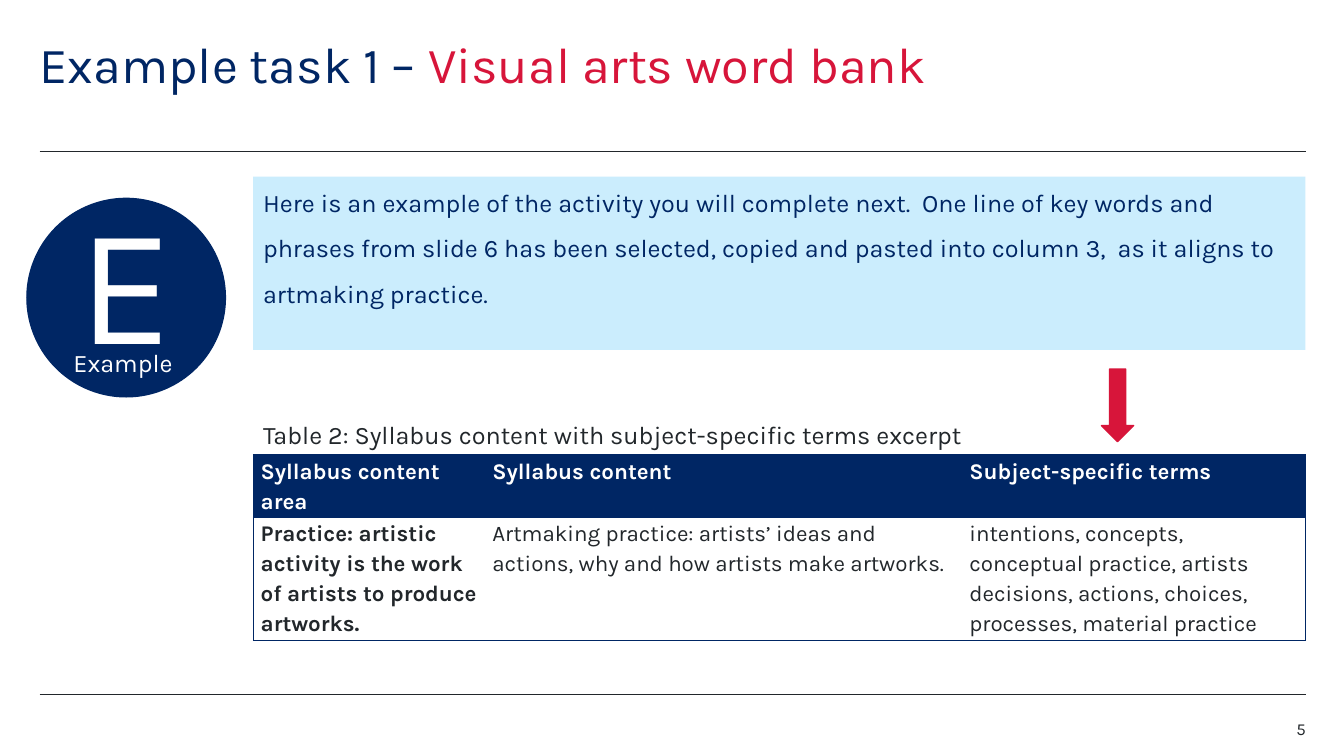
from lxml import etree
from pptx import Presentation
from pptx.dml.color import RGBColor
from pptx.enum.shapes import MSO_CONNECTOR, MSO_SHAPE
from pptx.enum.text import MSO_ANCHOR, MSO_AUTO_SIZE, PP_ALIGN
from pptx.oxml.ns import qn
from pptx.util import Cm, Pt

LEFT, CENTER, RIGHT = PP_ALIGN.LEFT, PP_ALIGN.CENTER, PP_ALIGN.RIGHT
TOP, MIDDLE = MSO_ANCHOR.TOP, MSO_ANCHOR.MIDDLE
OVAL, RECTANGLE, DOWN_ARROW = MSO_SHAPE.OVAL, MSO_SHAPE.RECTANGLE, MSO_SHAPE.DOWN_ARROW
STRAIGHT = MSO_CONNECTOR.STRAIGHT
NO_AUTOFIT = MSO_AUTO_SIZE.NONE
FONT = "Karla"
COLORS = {"navy": "002664", "red": "D7153A", "sky": "CBEDFD", "ink": "22272B", "white": "FFFFFF"}
NO_STYLE = "{2D5ABB26-0587-4C30-8999-92F81FD0307C}"
PLAIN, PADDED = (0, 0, 0, 0), (0.25, 0.13, 0.25, 0.13)
COLUMN_WIDTHS = (5.84, 12.02, 8.66)
ROW_HEIGHTS = (1.57, 3.1)
ROWS = (
    ("Syllabus content area", "Syllabus content", "Subject-specific terms"),
    (
        "Practice: artistic activity is the work of artists to produce artworks.",
        "Artmaking practice: artists’ ideas and actions, why and how artists make artworks.",
        "intentions, concepts, conceptual practice, artists decisions, actions, choices, "
        "processes, material practice",
    ),
)


def color(name):
    """Return the named colour."""
    return RGBColor.from_string(COLORS[name])


def style(paragraph, size, color_name, align=LEFT, spacing=1.0, bold=False):
    """Format a whole paragraph."""
    paragraph.alignment = align
    paragraph.line_spacing = spacing
    font = paragraph.font
    font.name, font.size, font.bold = FONT, Pt(size), bold
    font.color.rgb = color(color_name)


def frame_text(frame, insets, anchor):
    """Set the insets (left, top, right, bottom) and anchor of a text frame."""
    frame.auto_size = NO_AUTOFIT
    frame.word_wrap = True
    frame.vertical_anchor = anchor
    frame.margin_left, frame.margin_top, frame.margin_right, frame.margin_bottom = map(Cm, insets)


def write(shape, text, size, color_name, insets=PADDED, anchor=TOP, align=LEFT, spacing=1.0):
    """Put one formatted paragraph in a shape."""
    frame = shape.text_frame
    frame_text(frame, insets, anchor)
    paragraph = frame.paragraphs[0]
    paragraph.text = text
    style(paragraph, size, color_name, align, spacing)


def add_block(slide, kind, box, fill, outlined=False):
    """Add a flat filled shape, with an optional outline of the same colour."""
    shape = slide.shapes.add_shape(kind, *map(Cm, box))
    shape.shadow.inherit = False
    shape.fill.solid()
    shape.fill.fore_color.rgb = color(fill)
    if outlined:
        shape.line.color.rgb = color(fill)
        shape.line.width = Pt(1)
    else:
        shape.line.fill.background()
    return shape


def add_text(slide, box, *args, **options):
    """Add a text box with one formatted paragraph."""
    write(slide.shapes.add_textbox(*map(Cm, box)), *args, **options)


def add_rule(slide, left, top, width):
    """Draw a thin horizontal rule."""
    rule = slide.shapes.add_connector(STRAIGHT, Cm(left), Cm(top), Cm(left + width), Cm(top))
    rule.line.color.rgb = color("ink")
    rule.line.width = Pt(0.5)
    etree.SubElement(rule._element.spPr, qn("a:effectLst"))


def add_title(slide, box):
    """Fill the title placeholder in two colours."""
    title = slide.shapes.title
    title.left, title.top, title.width, title.height = map(Cm, box)
    frame_text(title.text_frame, PLAIN, TOP)
    paragraph = title.text_frame.paragraphs[0]
    style(paragraph, 36, "navy", spacing=0.9)
    for text, name in (("Example task 1 – ", "navy"), ("Visual arts word bank", "red")):
        run = paragraph.add_run()
        run.text = text
        run.font.color.rgb = color(name)


def add_badge(slide, left, top, diameter):
    """Add the round example badge."""
    circle = add_block(slide, OVAL, (left, top, diameter, diameter), "navy", outlined=True)
    write(circle, "E", 120, "white", (0.25, 0, 0.25, 1.04), MIDDLE, CENTER)
    add_text(slide, (left + 1.17, top + 3.74, 2.64, 1.22), "Example", 18, "white", PLAIN)


def add_introduction(slide, box):
    """Add the shaded panel that explains the activity."""
    panel = add_block(slide, RECTANGLE, box, "sky")
    text = (
        "Here is an example of the activity you will complete next.  One line of key words and "
        "phrases from slide 6 has been selected, copied and pasted into column 3,  as it aligns "
        "to artmaking practice."
    )
    write(panel, text, 18, "navy", (0.25, 0, 0.25, 1.16), MIDDLE, spacing=1.5)


def add_border(cell, side):
    """Draw a thin navy border on one side of a cell."""
    line = etree.SubElement(cell._tc.get_or_add_tcPr(), qn(f"a:ln{side}"), w=str(Pt(0.5)))
    fill = etree.SubElement(line, qn("a:solidFill"))
    etree.SubElement(fill, qn("a:srgbClr"), val=COLORS["navy"])


def fill_cell(cell, text, is_header, is_first, is_last):
    """Write and format one cell of the syllabus table."""
    sides = ("L" if is_first else "") + ("R" if is_last else "") + ("T" if is_header else "TB")
    for side in sides:
        add_border(cell, side)
    if is_header:
        cell.fill.solid()
        cell.fill.fore_color.rgb = color("navy")
    else:
        cell.fill.background()
    cell.margin_left = cell.margin_right = Cm(0.19)
    cell.margin_top = cell.margin_bottom = 0
    paragraph = cell.text_frame.paragraphs[0]
    paragraph.text = text
    style(paragraph, 16, "white" if is_header else "ink", spacing=1.15, bold=is_header or is_first)


def add_syllabus(slide, left, top):
    """Add the caption, the arrow to the third column and the syllabus table."""
    caption = "Table 2: Syllabus content with subject-specific terms excerpt"
    add_text(slide, (left, top, 19.35, 1.02), caption, 18, "ink", anchor=MIDDLE)
    add_block(slide, DOWN_ARROW, (left + 21.38, top - 1.14, 0.81, 1.83), "red", outlined=True)
    size = Cm(sum(COLUMN_WIDTHS)), Cm(sum(ROW_HEIGHTS))
    table = slide.shapes.add_table(
        len(ROWS), len(COLUMN_WIDTHS), Cm(left), Cm(top + 1.02), *size
    ).table
    table.horz_banding = False
    table._tbl.tblPr.find(qn("a:tableStyleId")).text = NO_STYLE
    for column, width in zip(table.columns, COLUMN_WIDTHS):
        column.width = Cm(width)
    for row, height, texts in zip(table.rows, ROW_HEIGHTS, ROWS):
        row.height = Cm(height)
        for index, (cell, text) in enumerate(zip(row.cells, texts)):
            fill_cell(cell, text, texts is ROWS[0], index == 0, index == len(texts) - 1)


def main():
    """Build and save the slide."""
    presentation = Presentation()
    presentation.slide_width, presentation.slide_height = Cm(33.87), Cm(19.05)
    slide = presentation.slides.add_slide(presentation.slide_layouts[5])
    for top in (3.81, 17.5):
        add_rule(slide, 1, top, 31.9)
    add_title(slide, (1, 1, 28, 2.8))
    add_badge(slide, 0.68, 5, 5)
    add_introduction(slide, (6.38, 4.45, 26.52, 4.37))
    add_syllabus(slide, 6.38, 10.44)
    add_text(slide, (30.91, 18.11, 2, 0.51), "5", 12, "ink", PLAIN, align=RIGHT)
    presentation.save("out.pptx")


if __name__ == "__main__":
    main()
